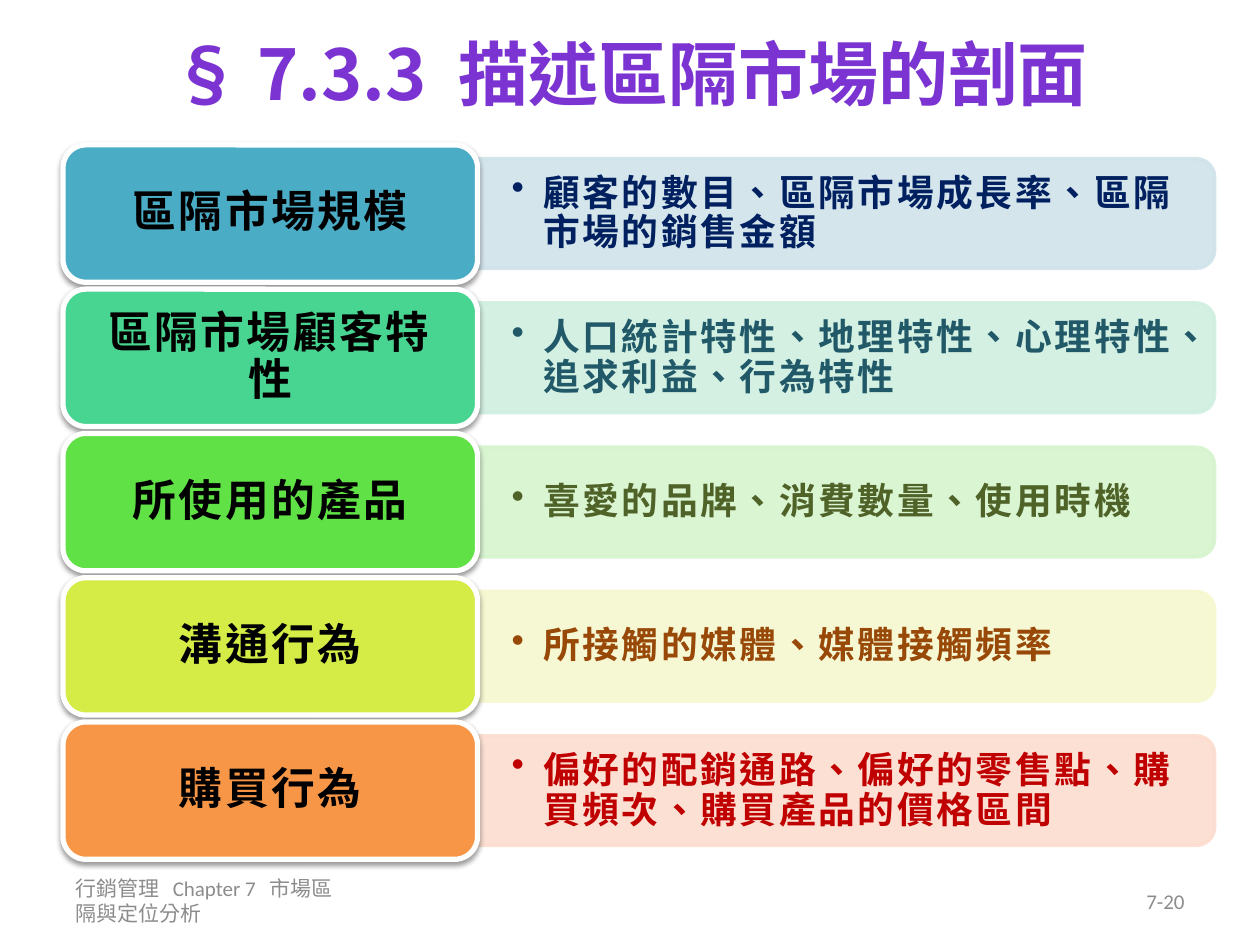
from dataclasses import dataclass

from lxml import etree
from pptx import Presentation
from pptx.dml.color import RGBColor
from pptx.enum import shapes, text
from pptx.oxml import ns
from pptx.util import Inches, Pt


@dataclass(frozen=True)
class Theme:
    heading_font: str = "Noto Sans CJK SC"
    footer_font: str = "Calibri"
    title_size: float = 40
    label_size: float = 25
    detail_size: float = 21
    footer_size: float = 12
    title: str = "7B34D2"
    label: str = "000000"
    border: str = "FFFFFF"
    footer: str = "8C8C8C"
    tracking: float = 1.5


@dataclass(frozen=True)
class Row:
    label: str
    detail: str
    card: str
    panel: str
    ink: str


@dataclass(frozen=True)
class Style:
    font: str
    size: float
    color: str
    bold: bool = True
    tracking: float = 0


THEME = Theme()
TITLE = Style(THEME.heading_font, THEME.title_size, THEME.title)
LABEL = Style(THEME.heading_font, THEME.label_size, THEME.label, tracking=THEME.tracking)
FOOTER = Style(THEME.footer_font, THEME.footer_size, THEME.footer, bold=False)

ROWS = [
    Row("區隔市場規模", "顧客的數目、區隔市場成長率、區隔市場的銷售金額",
        "4BACC6", "D0E3EA", "002060"),
    Row("區隔市場顧客特性", "人口統計特性、地理特性、心理特性、追求利益、行為特性",
        "48D491", "CFEFE1", "215968"),
    Row("所使用的產品", "喜愛的品牌、消費數量、使用時機",
        "60E146", "D6F4CE", "4F6228"),
    Row("溝通行為", "所接觸的媒體、媒體接觸頻率",
        "D5EC46", "F6F8CF", "984807"),
    Row("購買行為", "偏好的配銷通路、偏好的零售點、購買頻次、購買產品的價格區間",
        "F79646", "FCDDCF", "C00000"),
]

ROW_TOP, ROW_PITCH = 1.15, 1.145
CARD_LEFT, CARD_WIDTH, CARD_HEIGHT = 0.5, 3.29, 1.09
PANEL_WIDTH, PANEL_HEIGHT = 5.85, 0.87
PANEL_LEFT = CARD_LEFT + CARD_WIDTH


def child(parent, tag: str, **attributes: str):
    return etree.SubElement(parent, ns.qn(tag), attributes)


def add_span(para, words: str, style: Style, tracking: float | None = None) -> None:
    span = para.add_run()
    span.text = words
    font = span.font
    font.name, font.size, font.bold = style.font, Pt(style.size), style.bold
    font.color.rgb = RGBColor.from_string(style.color)
    properties = span._r.get_or_add_rPr()
    properties.set("lang", "zh-TW")
    spacing = style.tracking if tracking is None else tracking
    if spacing:
        properties.set("spc", str(round(spacing * 100)))
    child(properties, "a:ea", typeface=THEME.heading_font)


def prepare_frame(shape, across: float = 0.1, down: float = 0.05):
    """Centre the text vertically, set the insets and return the first paragraph."""
    frame = shape.text_frame
    frame.word_wrap = True
    frame.vertical_anchor = text.MSO_ANCHOR.MIDDLE
    frame.margin_left = frame.margin_right = Inches(across)
    frame.margin_top = frame.margin_bottom = Inches(down)
    return frame.paragraphs[0]


def add_box(page, left: float, top: float, width: float, height: float):
    return page.shapes.add_textbox(Inches(left), Inches(top), Inches(width), Inches(height))


def add_filled(page, kind, left: float, top: float, width: float, height: float,
               fill: str, line: str, line_width: float):
    shape = page.shapes.add_shape(
        kind, Inches(left), Inches(top), Inches(width), Inches(height))
    shape.shadow.inherit = False
    shape.fill.solid()
    shape.fill.fore_color.rgb = RGBColor.from_string(fill)
    shape.line.color.rgb = RGBColor.from_string(line)
    shape.line.width = Pt(line_width)
    return shape


def add_panel(page, row: Row, middle: float) -> None:
    """Draw the detail panel: a tab turned a quarter so its round end faces right."""
    center = PANEL_LEFT + PANEL_WIDTH / 2
    panel = add_filled(page, shapes.MSO_SHAPE.ROUND_2_SAME_RECTANGLE,
                       center - PANEL_HEIGHT / 2, middle - PANEL_WIDTH / 2,
                       PANEL_HEIGHT, PANEL_WIDTH, row.panel, row.panel, 2)
    panel.rotation = 90
    for color in panel._element.spPr.iter(ns.qn("a:srgbClr")):
        child(color, "a:alpha", val="90000")

    box = add_box(page, PANEL_LEFT, middle - 0.39, PANEL_WIDTH - 0.04, 0.79)
    para = prepare_frame(box, 0.27, 0.14)
    para.line_spacing = 0.9
    properties = para._p.get_or_add_pPr()
    properties.set("marL", str(Inches(0.25)))
    properties.set("indent", str(Inches(-0.25)))
    child(properties, "a:buChar", char="•")
    add_span(para, row.detail, Style(THEME.heading_font, THEME.detail_size,
                                     row.ink, tracking=THEME.tracking))


def add_card(page, row: Row, top: float) -> None:
    card = add_filled(page, shapes.MSO_SHAPE.ROUNDED_RECTANGLE, CARD_LEFT, top,
                      CARD_WIDTH, CARD_HEIGHT, row.card, THEME.border, 3)
    effects = card._element.spPr.find(ns.qn("a:effectLst"))
    shadow = child(effects, "a:outerShdw", blurRad=str(Pt(3.1)), dist=str(Pt(1.6)),
                   dir="5400000", rotWithShape="0")
    child(child(shadow, "a:srgbClr", val="000000"), "a:alpha", val="38000")
    para = prepare_frame(card, 0.15, 0.1)
    para.alignment = text.PP_ALIGN.CENTER
    para.line_spacing = 0.9
    add_span(para, row.label, LABEL)


def add_title(page) -> None:
    para = prepare_frame(add_box(page, 0.5, 0, 9, 1.15))
    para.alignment = text.PP_ALIGN.CENTER
    add_span(para, "§", TITLE, tracking=9)
    add_span(para, "7.3.3", TITLE)
    add_span(para, " ", TITLE, tracking=9)
    add_span(para, "描述區隔市場的剖面", TITLE)


def add_footer(page) -> None:
    para = prepare_frame(add_box(page, 0.5, 6.95, 2.33, 0.4))
    add_span(para, "行銷管理", FOOTER)
    add_span(para, " ", FOOTER, tracking=5)
    add_span(para, "Chapter 7", FOOTER)
    add_span(para, " ", FOOTER, tracking=5)
    add_span(para, "市場區隔與定位分析", FOOTER)

    para = prepare_frame(add_box(page, 7.17, 6.95, 2.33, 0.4))
    para.alignment = text.PP_ALIGN.RIGHT
    add_span(para, "7-20", FOOTER)


def main() -> None:
    deck = Presentation()
    deck.slide_width, deck.slide_height = Inches(10), Inches(7.5)
    page = deck.slides.add_slide(deck.slide_layouts[6])
    add_title(page)
    for index, row in enumerate(ROWS):
        top = ROW_TOP + index * ROW_PITCH
        add_panel(page, row, top + CARD_HEIGHT / 2)
        add_card(page, row, top)
    add_footer(page)
    deck.save("out.pptx")


if __name__ == "__main__":
    main()
